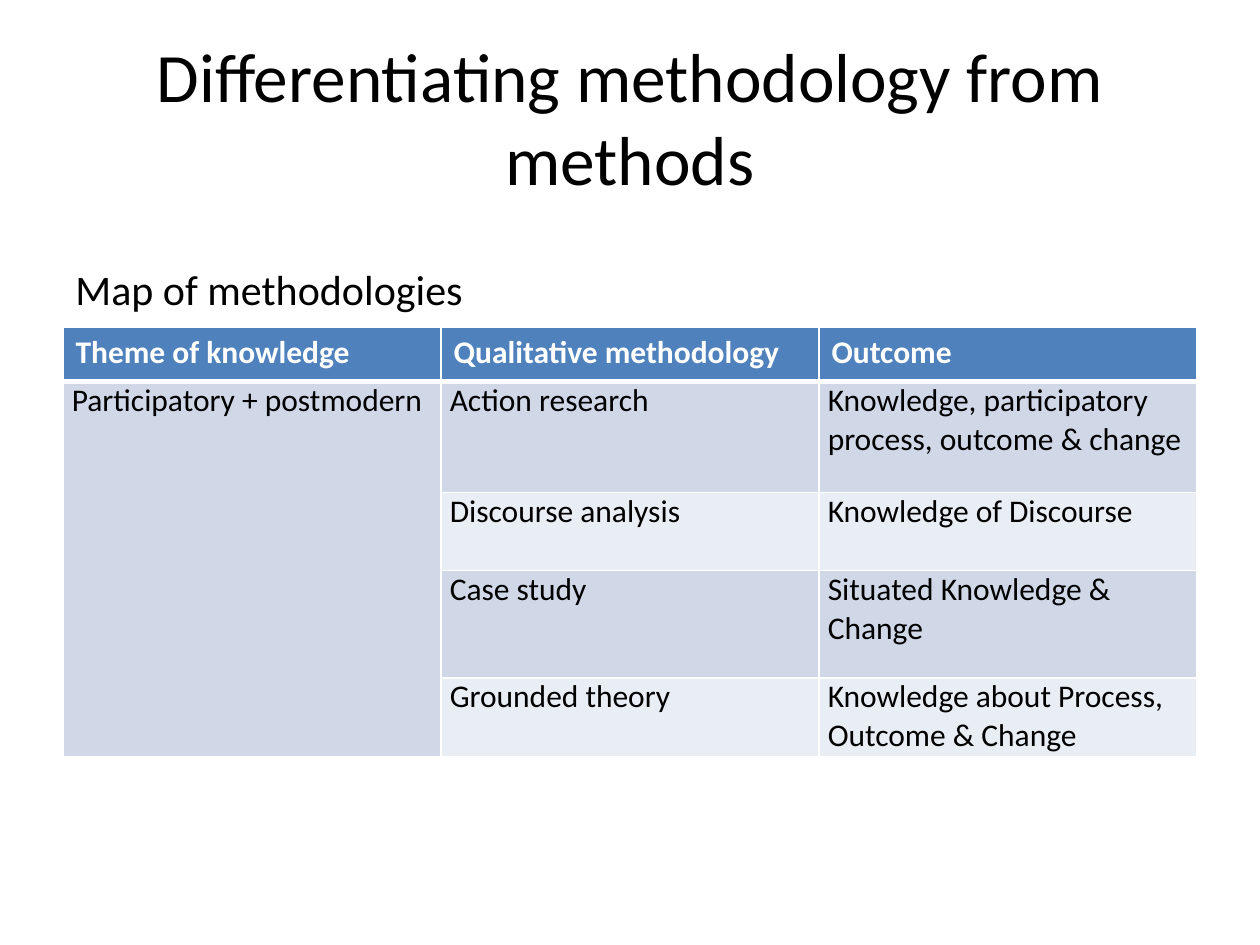
import lxml.etree
import pptx
import pptx.dml.color
import pptx.enum.text
import pptx.oxml.ns
import pptx.util

WIDTH, HEIGHT = 10, 7.5
MARGIN = 0.05 * WIDTH
CONTENT_WIDTH = WIDTH - 2 * MARGIN
FONT = "Calibri"
BLACK, WHITE, HEADER_BLUE = "000000", "FFFFFF", "4F81BD"
BANDS = ("D0D8E8", "E9EDF4")
ROW_HEIGHTS = (0.43, 0.88, 0.62, 0.85, 0.63)
HEADINGS = ("Theme of knowledge", "Qualitative methodology", "Outcome")
THEME = "Participatory + postmodern"
METHODOLOGIES = (
    ("Action research", "Knowledge, participatory process, outcome & change"),
    ("Discourse analysis", "Knowledge of Discourse"),
    ("Case study", "Situated Knowledge & Change"),
    ("Grounded theory", "Knowledge about Process, Outcome & Change"),
)


def color(value):
    """Turn a hex string into a colour."""
    return pptx.dml.color.RGBColor.from_string(value)


def write(text_frame, text, size, ink=BLACK, bold=False):
    """Add one run to the first paragraph and return that paragraph."""
    paragraph = text_frame.paragraphs[0]
    run = paragraph.add_run()
    run.text = text
    run.font.name = FONT
    run.font.size = pptx.util.Pt(size)
    run.font.bold = bold
    run.font.color.rgb = color(ink)
    return paragraph


def add_text(slide, box, text, size):
    """Place a wrapping text box and return its frame and paragraph."""
    shape = slide.shapes.add_textbox(*map(pptx.util.Inches, box))
    shape.text_frame.word_wrap = True
    return shape.text_frame, write(shape.text_frame, text, size)


def add_title(slide, box):
    """Place the centred slide title."""
    text_frame, paragraph = add_text(slide, box, "Differentiating methodology from methods", 39.6)
    text_frame.vertical_anchor = pptx.enum.text.MSO_ANCHOR.MIDDLE
    paragraph.alignment = pptx.enum.text.PP_ALIGN.CENTER


def add_caption(slide, box):
    """Place the heading above the table."""
    add_text(slide, box, "Map of methodologies", 24)


def style_cell(cell, fill, top=1, bottom=1):
    """Give a cell white borders and a solid fill."""
    properties = cell._tc.get_or_add_tcPr()
    for side, points in (("L", 1), ("R", 1), ("T", top), ("B", bottom)):
        line = lxml.etree.SubElement(properties, pptx.oxml.ns.qn(f"a:ln{side}"), w=str(pptx.util.Pt(points)))
        solid = lxml.etree.SubElement(line, pptx.oxml.ns.qn("a:solidFill"))
        lxml.etree.SubElement(solid, pptx.oxml.ns.qn("a:srgbClr"), val=WHITE)
    cell.fill.solid()
    cell.fill.fore_color.rgb = color(fill)


def write_body_cell(cell, text, space_after):
    """Write a body cell with tight margins."""
    cell.margin_left = cell.margin_right = pptx.util.Inches(0.07)
    cell.margin_top = cell.margin_bottom = 0
    paragraph = write(cell.text_frame, text, 18)
    paragraph.space_after = pptx.util.Pt(space_after)


def add_methodology_table(slide, box):
    """Place the table of methodologies under one merged theme."""
    frame = slide.shapes.add_table(len(ROW_HEIGHTS), len(HEADINGS), *map(pptx.util.Inches, box))
    table = frame.table
    for row, height in zip(table.rows, ROW_HEIGHTS):
        row.height = pptx.util.Inches(height)
    for column, heading in enumerate(HEADINGS):
        cell = table.cell(0, column)
        style_cell(cell, HEADER_BLUE, bottom=3)
        write(cell.text_frame, heading, 18, WHITE, True)
    for row, texts in enumerate(METHODOLOGIES, start=1):
        for column in range(len(HEADINGS)):
            fill = BANDS[(row - 1) % 2] if column else BANDS[0]
            style_cell(table.cell(row, column), fill, top=3 if row == 1 else 1)
        for column, text in enumerate(texts, start=1):
            write_body_cell(table.cell(row, column), text, 6)
    theme_cell = table.cell(1, 0)
    theme_cell.merge(table.cell(len(METHODOLOGIES), 0))
    write_body_cell(theme_cell, THEME, 12)


def main():
    """Build and save the slide."""
    presentation = pptx.Presentation()
    presentation.slide_width = pptx.util.Inches(WIDTH)
    presentation.slide_height = pptx.util.Inches(HEIGHT)
    slide = presentation.slides.add_slide(presentation.slide_layouts[6])
    add_title(slide, (MARGIN, 0.04 * HEIGHT, CONTENT_WIDTH, HEIGHT / 6))
    add_methodology_table(slide, (MARGIN, 2.6, CONTENT_WIDTH, sum(ROW_HEIGHTS)))
    add_caption(slide, (MARGIN, 2.04, 4.81, 0.5))
    presentation.save("out.pptx")


if __name__ == "__main__":
    main()
